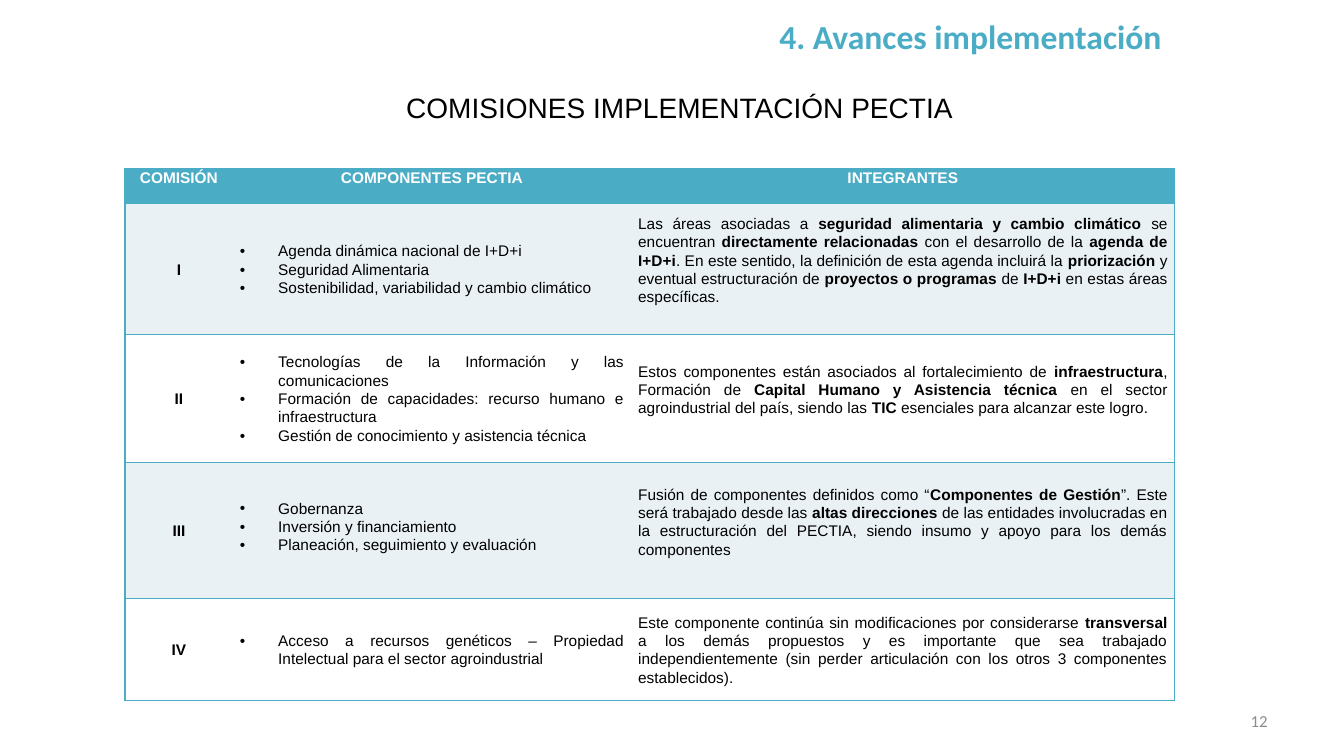
from lxml.etree import SubElement
from pptx import Presentation
from pptx.dml.color import RGBColor
from pptx.enum.text import MSO_ANCHOR, PP_ALIGN
from pptx.oxml.ns import qn
from pptx.util import Emu, Pt

PX = 9144  # 100 px to the inch
TEAL, PALE, WHITE, BLACK, GREY = "4BACC6", "E9F1F5", "FFFFFF", "000000", "8C8C8C"
LINE = 18  # height of one table text line
INDENT = 38

HEADERS = ["COMISIÓN", "COMPONENTES PECTIA", "INTEGRANTES"]
COLUMN_WIDTHS = [107, 395, 539]
ROW_HEIGHTS = [35, 130, 127, 135, 101]

# Number, components, members (** marks bold), top anchored lines, bottom lines
COMMISSIONS = [
    ("I",
     ["Agenda dinámica nacional de I+D+i", "Seguridad Alimentaria",
      "Sostenibilidad, variabilidad y cambio climático"],
     "Las áreas asociadas a **seguridad alimentaria y cambio climático **se encuentran "
     "**directamente relacionadas **con el desarrollo de la **agenda de I+D+i**. En este "
     "sentido, la definición de esta agenda incluirá la **priorización** y eventual "
     "estructuración de **proyectos o programas **de **I+D+i **en estas áreas específicas.",
     0, 1),
    ("II",
     ["Tecnologías de la Información y las comunicaciones",
      "Formación de capacidades: recurso humano e infraestructura",
      "Gestión de conocimiento y asistencia técnica"],
     "Estos componentes están asociados al fortalecimiento de **infraestructura**, Formación "
     "de **Capital Humano y Asistencia técnica **en el sector agroindustrial del país, siendo "
     "las **TIC** esenciales para alcanzar este logro.",
     1, 1),
    ("III",
     ["Gobernanza", "Inversión y financiamiento", "Planeación, seguimiento y evaluación"],
     "Fusión de componentes definidos como “**Componentes de Gestión**”. Este será trabajado "
     "desde las **altas direcciones **de las entidades involucradas en la estructuración del "
     "PECTIA, siendo insumo y apoyo para los demás componentes",
     2, 1),
    ("IV",
     ["Acceso a recursos genéticos – Propiedad Intelectual para el sector agroindustrial"],
     "Este componente continúa sin modificaciones por considerarse **transversal** a los demás "
     "propuestos y es importante que sea trabajado independientemente (sin perder articulación "
     "con los otros 3 componentes establecidos).",
     0, 0),
]


def px(length):
    return Emu(length * PX)


def color(value):
    return RGBColor.from_string(value)


def style(span, font, size, ink, bold=False):
    span.font.name = font
    span.font.size = Pt(size)
    span.font.bold = bold
    span.font.color.rgb = color(ink)


def add_label(page, box, text, font, size, ink, bold=False, align=PP_ALIGN.LEFT,
              anchor=MSO_ANCHOR.TOP, wrap=True):
    frame = page.shapes.add_textbox(*map(px, box)).text_frame
    frame.word_wrap = wrap
    frame.vertical_anchor = anchor
    frame.text = text
    para = frame.paragraphs[0]
    para.alignment = align
    style(para.runs[0], font, size, ink, bold)


def add_bullet(para):
    properties = para._p.get_or_add_pPr()
    properties.set("marL", str(px(INDENT)))
    properties.set("indent", str(px(-INDENT)))
    SubElement(properties, qn("a:buFont"), typeface="Arial")
    SubElement(properties, qn("a:buChar"), char="•")


def set_borders(cell, first, last):
    """Rule every row; draw verticals only on the outer edges."""
    visible = {"lnL": first, "lnR": last, "lnT": True, "lnB": True}
    properties = cell._tc.get_or_add_tcPr()
    for side, shown in visible.items():
        line = SubElement(properties, qn(f"a:{side}"), w=str(Pt(1)))
        if shown:
            fill = SubElement(line, qn("a:solidFill"))
            SubElement(fill, qn("a:srgbClr"), val=TEAL)
        else:
            SubElement(line, qn("a:noFill"))


def fill_cell(cell, texts, fill, ink=BLACK, bold=False, align=PP_ALIGN.CENTER,
              anchor=MSO_ANCHOR.MIDDLE, bullets=False, top=0, bottom=0):
    cell.fill.solid()
    cell.fill.fore_color.rgb = color(fill)
    cell.vertical_anchor = anchor
    cell.margin_left = cell.margin_right = px(7)
    cell.margin_top, cell.margin_bottom = px(top), px(bottom)
    frame = cell.text_frame
    for index, text in enumerate(texts):
        para = frame.add_paragraph() if index else frame.paragraphs[0]
        para.alignment = align
        para.line_spacing = 1.07
        if bullets:
            add_bullet(para)
        for part, words in enumerate(text.split("**")):
            span = para.add_run()
            span.text = words
            style(span, "Arial", 11, ink, bold or part % 2 == 1)


def add_commissions(page, left, top):
    width, height = sum(COLUMN_WIDTHS), sum(ROW_HEIGHTS)
    table = page.shapes.add_table(len(ROW_HEIGHTS), len(COLUMN_WIDTHS),
                                  *map(px, (left, top, width, height))).table
    for column, size in zip(table.columns, COLUMN_WIDTHS):
        column.width = px(size)
    for row, size in zip(table.rows, ROW_HEIGHTS):
        row.height = px(size)
        for index, cell in enumerate(row.cells):
            set_borders(cell, index == 0, index == len(COLUMN_WIDTHS) - 1)

    # Header row
    for cell, header in zip(table.rows[0].cells, HEADERS):
        fill_cell(cell, [header], TEAL, WHITE, True, anchor=MSO_ANCHOR.TOP)

    # One row per commission, in alternating fills
    for index, (number, components, members, above, below) in enumerate(COMMISSIONS):
        fill = WHITE if index % 2 else PALE
        first, middle, last = table.rows[index + 1].cells
        fill_cell(first, [number], fill, bold=True)
        fill_cell(middle, components, fill, align=PP_ALIGN.JUSTIFY, bullets=True,
                  anchor=MSO_ANCHOR.TOP if above else MSO_ANCHOR.MIDDLE, top=above * LINE)
        fill_cell(last, [members], fill, align=PP_ALIGN.JUSTIFY, bottom=below * LINE)


def add_headings(page):
    add_label(page, (393, 85, 645, 44), "COMISIONES IMPLEMENTACIÓN PECTIA", "Arial", 20, BLACK)
    add_label(page, (759, 11, 403, 50), "4. Avances implementación", "Calibri", 24, TEAL,
              bold=True, align=PP_ALIGN.RIGHT, wrap=False)


def main():
    deck = Presentation()
    deck.slide_width, deck.slide_height = px(1333), px(750)
    page = deck.slides.add_slide(deck.slide_layouts[6])
    add_headings(page)
    add_commissions(page, 124, 167)
    # Page number
    add_label(page, (956, 695, 311, 40), "12", "Calibri", 12, GREY,
              align=PP_ALIGN.RIGHT, anchor=MSO_ANCHOR.MIDDLE)
    deck.save("out.pptx")


if __name__ == "__main__":
    main()
